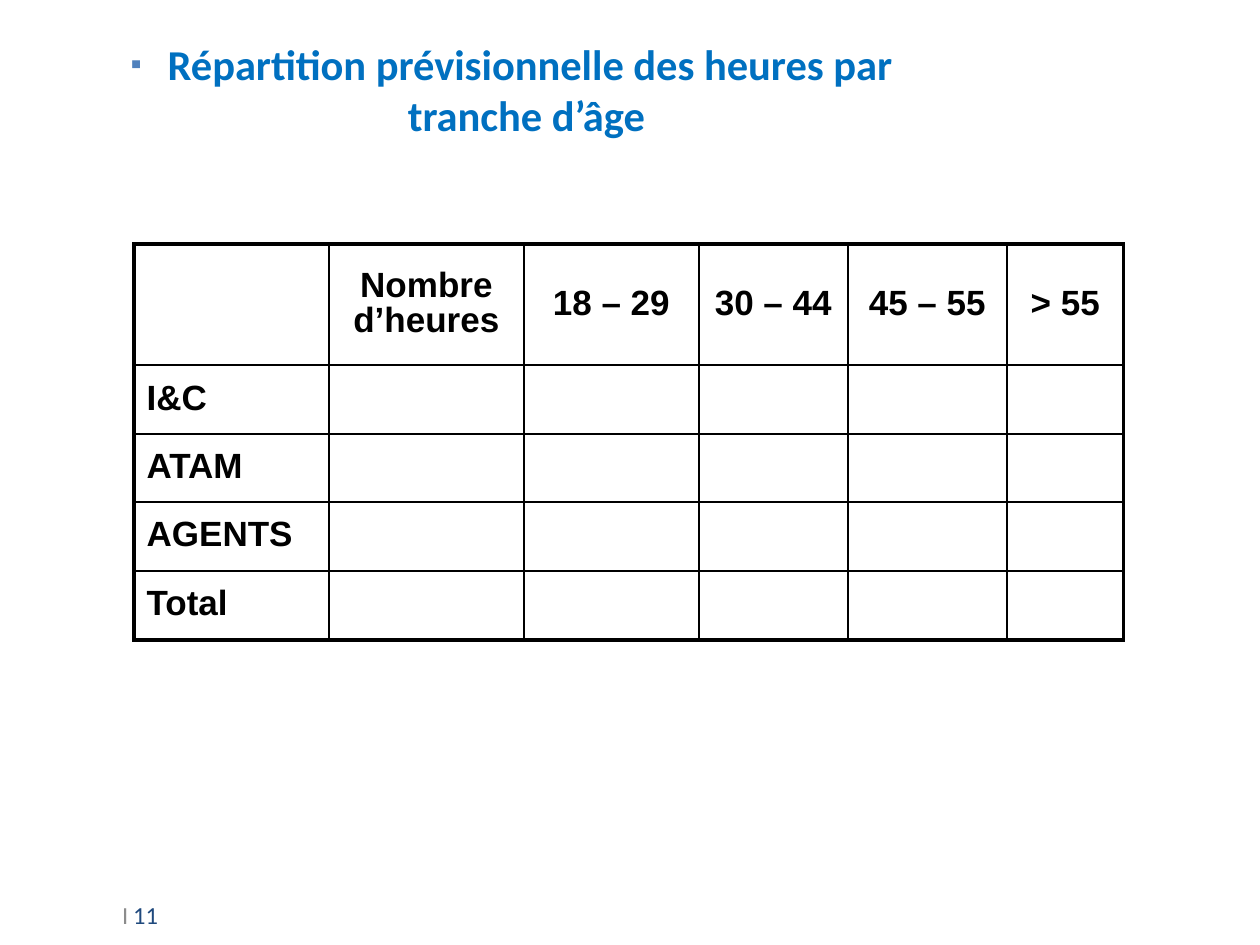
from typing import NamedTuple

from lxml import etree
from pptx import Presentation
from pptx import util as u
from pptx.dml.color import RGBColor
from pptx.enum import text
from pptx.oxml import ns

PX = u.Inches(1) // 126
BLACK = RGBColor(0x00, 0x00, 0x00)
TITLE_BLUE = RGBColor(0x00, 0x70, 0xC0)
BULLET_BLUE = RGBColor(0x4F, 0x81, 0xBD)
NUMBER_BLUE = RGBColor(0x1F, 0x49, 0x7D)
GREY = RGBColor(0x8C, 0x8C, 0x8C)

THIN, THICK = 1, 2.25
COLUMN_WIDTHS = [195, 195, 175, 149, 159, 117]
ROW_HEIGHTS = [121, 69, 68, 69, 69]
HEADINGS = ["", "Nombre d’heures", "18 – 29", "30 – 44", "45 – 55", "> 55"]
CATEGORIES = ["I&C", "ATAM", "AGENTS", "Total"]


class Box(NamedTuple):
    left: int
    top: int
    width: int
    height: int

    def emu(self) -> list[int]:
        return [side * PX for side in self]


class RunStyle(NamedTuple):
    size: float
    color: RGBColor
    font: str = "Calibri"
    bold: bool = False


TITLE_BOX = Box(74, 66, 875, 47)
TABLE_BOX = Box(134, 244, sum(COLUMN_WIDTHS), sum(ROW_HEIGHTS))
NUMBER_BOX = Box(105, 882, 126, 66)
CELL_STYLE = RunStyle(20, BLACK, "Arial", True)


def add_run(paragraph, words: str, style: RunStyle) -> None:
    run = paragraph.add_run()
    run.text = words
    run.font.size = u.Pt(style.size)
    run.font.name = style.font
    run.font.bold = style.bold
    run.font.color.rgb = style.color


def add_element(parent, tag: str, **attributes: str):
    return etree.SubElement(parent, ns.qn(tag), attributes)


def set_bullet(paragraph, character: str, color: RGBColor, indent: int) -> None:
    properties = paragraph._p.get_or_add_pPr()
    properties.set("marL", str(indent * PX))
    properties.set("indent", str(-indent * PX))
    add_element(add_element(properties, "a:buClr"), "a:srgbClr", val=str(color))
    add_element(properties, "a:buFont", typeface="Arial")
    add_element(properties, "a:buChar", char=character)


def set_borders(cell, widths: dict[str, float]) -> None:
    properties = cell._tc.get_or_add_tcPr()
    for side, width in widths.items():
        line = add_element(properties, f"a:ln{side}", w=str(u.Pt(width)))
        fill = add_element(line, "a:solidFill")
        add_element(fill, "a:srgbClr", val=str(BLACK))


def fill_cell(cell, words: str, centred: bool) -> None:
    cell.vertical_anchor = text.MSO_ANCHOR.MIDDLE
    paragraph = cell.text_frame.paragraphs[0]
    paragraph.alignment = text.PP_ALIGN.CENTER if centred else text.PP_ALIGN.LEFT
    paragraph.line_spacing = 0.9
    spacing = add_element(paragraph._p.get_or_add_pPr(), "a:spcBef")
    add_element(spacing, "a:spcPct", val="100000")
    add_run(paragraph, words, CELL_STYLE)


def add_title(slide) -> None:
    title = slide.shapes.title
    title.left, title.top, title.width, title.height = TITLE_BOX.emu()
    frame = title.text_frame
    frame.word_wrap = True
    frame.auto_size = text.MSO_AUTO_SIZE.NONE
    frame.vertical_anchor = text.MSO_ANCHOR.MIDDLE
    paragraph = frame.paragraphs[0]
    paragraph.alignment = text.PP_ALIGN.CENTER
    set_bullet(paragraph, "▪", BULLET_BLUE, 30)
    add_run(paragraph, " ", RunStyle(18, BLACK))
    add_run(paragraph, "Répartition prévisionnelle des heures par tranche d’âge",
            RunStyle(24.3, TITLE_BLUE, bold=True))


def add_hours_table(slide) -> None:
    rows = [HEADINGS] + [[name] + [""] * (len(HEADINGS) - 1) for name in CATEGORIES]
    last_row, last_column = len(rows) - 1, len(HEADINGS) - 1
    table = slide.shapes.add_table(len(rows), len(HEADINGS), *TABLE_BOX.emu()).table
    table.first_row = table.horz_banding = False
    for column, width in zip(table.columns, COLUMN_WIDTHS):
        column.width = width * PX
    for row, height in zip(table.rows, ROW_HEIGHTS):
        row.height = height * PX
    for i, row in enumerate(rows):
        for j, words in enumerate(row):
            cell = table.cell(i, j)
            set_borders(cell, {
                "L": THICK if j == 0 else THIN,
                "R": THICK if j == last_column else THIN,
                "T": THICK if i == 0 else THIN,
                "B": THICK if i == last_row else THIN,
            })
            cell.fill.background()
            if words:
                fill_cell(cell, words, centred=i == 0)


def add_page_number(slide) -> None:
    frame = slide.shapes.add_textbox(*NUMBER_BOX.emu()).text_frame
    frame.word_wrap = True
    frame.vertical_anchor = text.MSO_ANCHOR.MIDDLE
    paragraph = frame.paragraphs[0]
    add_run(paragraph, " ", RunStyle(12, GREY))
    add_run(paragraph, "I", RunStyle(14, GREY))
    add_run(paragraph, " ", RunStyle(12, GREY))
    add_run(paragraph, "11", RunStyle(14, NUMBER_BLUE))


def main() -> None:
    """Build the slide of forecast hours by age group."""
    presentation = Presentation()
    presentation.slide_width, presentation.slide_height = u.Inches(10), u.Inches(7.5)
    slide = presentation.slides.add_slide(presentation.slide_layouts[5])
    add_page_number(slide)
    add_title(slide)
    add_hours_table(slide)
    presentation.save("out.pptx")


if __name__ == "__main__":
    main()
